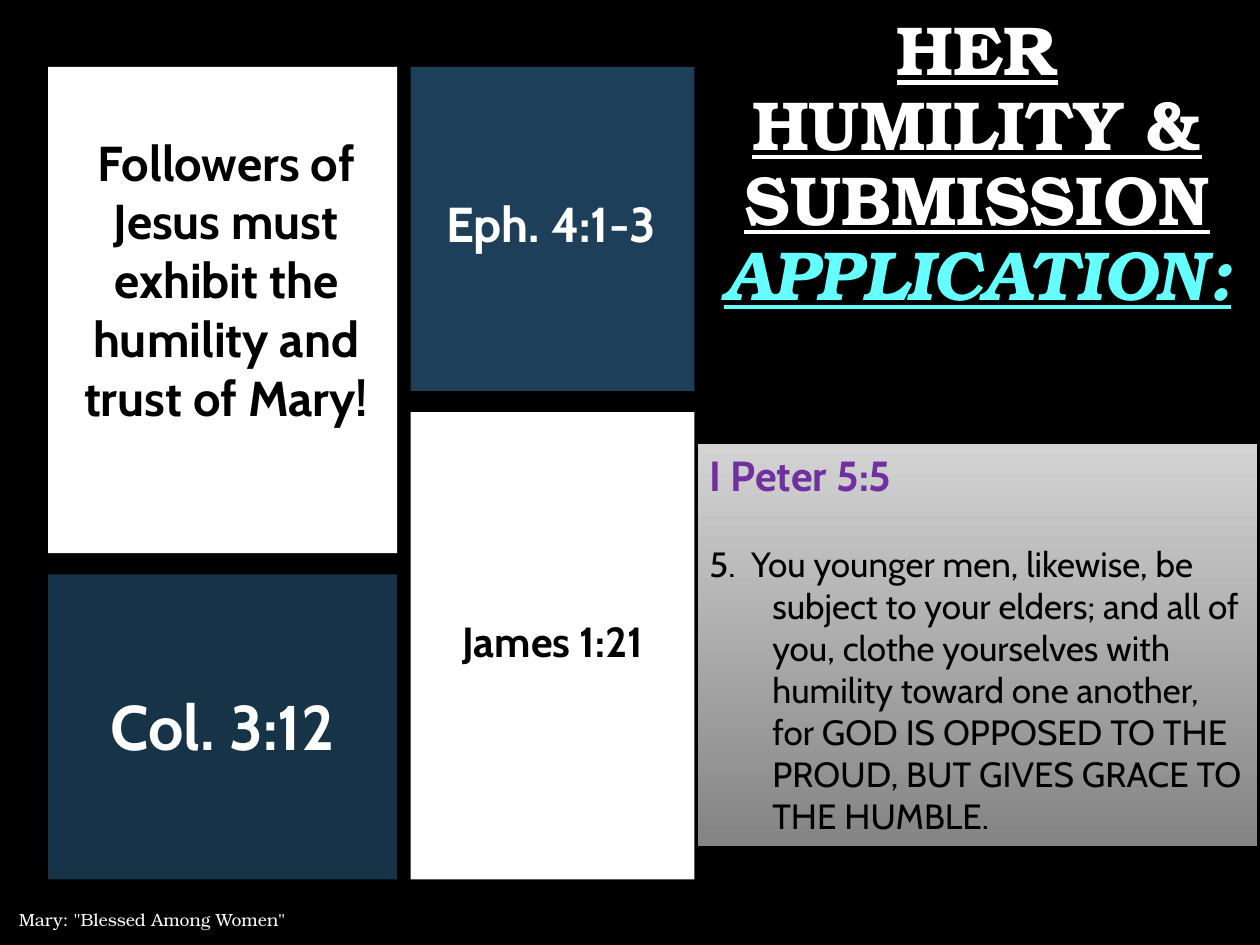
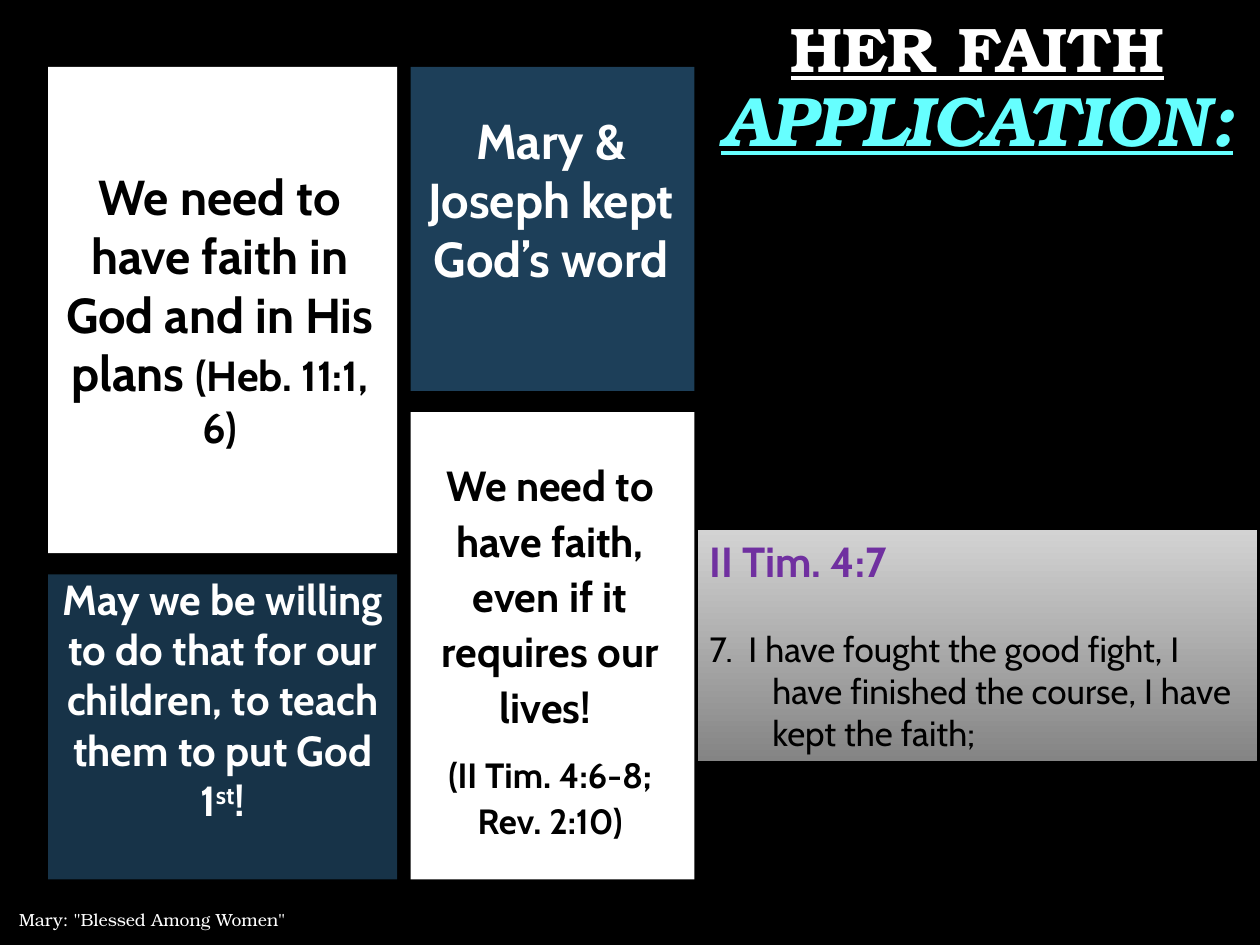
import pptx
import pptx.dml.color
import pptx.enum.shapes
import pptx.enum.text
import pptx.oxml
import pptx.oxml.ns
import pptx.util

Cm = pptx.util.Cm
Pt = pptx.util.Pt
RGBColor = pptx.dml.color.RGBColor
PP_ALIGN = pptx.enum.text.PP_ALIGN
MSO_ANCHOR = pptx.enum.text.MSO_ANCHOR
RECTANGLE = pptx.enum.shapes.MSO_SHAPE.RECTANGLE

BLACK = RGBColor(0x00, 0x00, 0x00)
WHITE = RGBColor(0xFF, 0xFF, 0xFF)
CYAN = RGBColor(0x66, 0xFF, 0xFF)
PURPLE = RGBColor(0x70, 0x30, 0xA0)
STEEL_BLUE = RGBColor(0x2A, 0x5B, 0x7F)
DARK_BLUE = RGBColor(0x1F, 0x44, 0x5F)
LIGHT_GREY = RGBColor(0xD3, 0xD3, 0xD3)
MID_GREY = RGBColor(0x84, 0x84, 0x84)

BODY_FONT = "Cabin"
TITLE_FONT = "TeX Gyre Bonum"

PANEL_TOP, PANEL_BOTTOM, PANEL_GAP = 1.35, 17.73, 0.43
# left, width, height of the upper panel, then (colour, opacity %) from top to bottom
PANEL_COLUMNS = [
    (0.97, 7.04, 9.8, [(WHITE, 100), (DARK_BLUE, 76)]),
    (8.28, 5.72, 6.53, [(STEEL_BLUE, 70), (WHITE, 100)]),
]


def style_run(r, size, color, bold=True, name=BODY_FONT):
    r.font.name = name
    r.font.size = Pt(size)
    r.font.bold = bold
    r.font.color.rgb = color


def set_opacity(sp, percent):
    color = sp.fill._xPr.find(".//" + pptx.oxml.ns.qn("a:srgbClr"))
    alpha = pptx.oxml.parse_xml(
        f'<a:alpha {pptx.oxml.ns.nsdecls("a")} val="{percent * 1000}"/>')
    color.append(alpha)


def outline_run(r, color, width):
    """Draw a line round the letters of a run."""
    ln = pptx.oxml.parse_xml(
        f'<a:ln {pptx.oxml.ns.nsdecls("a")} w="{Pt(width)}">'
        f'<a:solidFill><a:srgbClr val="{color}"/></a:solidFill></a:ln>')
    r._r.get_or_add_rPr().insert(0, ln)


def add_title(s, heading, heading_size, application_size, height):
    title = s.shapes.title
    title.left, title.top = Cm(14), Cm(0.1)
    title.width, title.height = Cm(11.4), Cm(height)
    tf = title.text_frame
    tf.word_wrap = True
    tf.auto_size = pptx.enum.text.MSO_AUTO_SIZE.NONE
    tf.vertical_anchor = MSO_ANCHOR.BOTTOM
    tf.text = f"{heading}\nAPPLICATION:"
    for p, size, color in zip(tf.paragraphs, (heading_size, application_size), (WHITE, CYAN)):
        p.alignment = PP_ALIGN.CENTER
        p.line_spacing = 0.9
        p.space_before = Pt(0)
        style_run(p.runs[0], size, color, name=TITLE_FONT)
        p.runs[0].font.underline = True
    application = tf.paragraphs[1].runs[0]
    application.font.italic = True
    outline_run(application, "0000FF", 0.75)


def add_panels(s):
    for left, width, upper_height, fills in PANEL_COLUMNS:
        lower_top = PANEL_TOP + upper_height + PANEL_GAP
        spans = [(PANEL_TOP, upper_height), (lower_top, PANEL_BOTTOM - lower_top)]
        for (top, height), (color, opacity) in zip(spans, fills):
            sp = s.shapes.add_shape(RECTANGLE, Cm(left), Cm(top), Cm(width), Cm(height))
            sp.shadow.inherit = False
            sp.line.fill.background()
            sp.fill.solid()
            sp.fill.fore_color.rgb = color
            if opacity < 100:
                set_opacity(sp, opacity)


def add_textbox(s, left, top, width, height):
    tf = s.shapes.add_textbox(Cm(left), Cm(top), Cm(width), Cm(height)).text_frame
    tf.word_wrap = True
    return tf


def add_panel_text(s, box, color, paragraphs, line_spacing=None):
    """Centre paragraphs, each a list of (text, size) or (text, size, baseline)."""
    tf = add_textbox(s, *box)
    for i, runs in enumerate(paragraphs):
        p = tf.add_paragraph() if i else tf.paragraphs[0]
        p.alignment = PP_ALIGN.CENTER
        p.line_spacing = line_spacing
        if i:
            p.space_before = Pt(10)
        for text, size, *baseline in runs:
            r = p.add_run()
            r.text = text
            style_run(r, size, color)
            if baseline:
                r._r.get_or_add_rPr().set("baseline", str(baseline[0] * 1000))


def add_verse(s, top, height, reference, verse):
    sp = s.shapes.add_shape(RECTANGLE, Cm(14.05), Cm(top), Cm(11.3), Cm(height))
    sp.shadow.inherit = False
    sp.line.color.rgb = BLACK
    sp.line.width = Pt(1)
    sp.fill.gradient()
    sp.fill.gradient_angle = 270
    for stop, position, color in zip(sp.fill.gradient_stops, (0, 1), (LIGHT_GREY, MID_GREY)):
        stop.position = position
        stop.color.rgb = color
    tf = sp.text_frame
    tf.word_wrap = True
    tf.vertical_anchor = MSO_ANCHOR.TOP
    tf.text = f"{reference}\n{verse}"
    for p in tf.paragraphs:
        p.alignment = PP_ALIGN.LEFT
        pPr = p._p.get_or_add_pPr()
        pPr.set("marL", str(Cm(1.27)))
        pPr.set("indent", str(-Cm(1.27)))
    heading, body = tf.paragraphs
    style_run(heading.runs[0], 24, PURPLE)
    style_run(body.runs[0], 20, BLACK, bold=False)
    body.space_before = Pt(24)


def add_footer(s):
    tf = add_textbox(s, 0.13, 18.11, 13.89, 0.84)
    tf.vertical_anchor = MSO_ANCHOR.MIDDLE
    tf.text = 'Mary: "Blessed Among Women"'
    style_run(tf.paragraphs[0].runs[0], 10, WHITE, bold=False, name=TITLE_FONT)


def add_application_slide(prs, *title):
    s = prs.slides.add_slide(prs.slide_layouts[5])
    add_title(s, *title)
    add_panels(s)
    add_footer(s)
    return s


def add_humility_slide(prs):
    s = add_application_slide(prs, "HER HUMILITY & SUBMISSION", 39.6, 39.6, 6.38)
    add_panel_text(s, (1.04, 2.54, 7.04, 7.44), BLACK,
                   [[("Followers of Jesus must exhibit the humility and trust of Mary!", 28)]])
    add_panel_text(s, (8.28, 12.19, 5.72, 5.36), BLACK, [[("James 1:21", 24)]], 1.1)
    add_panel_text(s, (8, 3.78, 6.22, 1.45), WHITE, [[("Eph. 4:1-3", 28)]])
    add_panel_text(s, (0.97, 13.74, 7.04, 1.8), WHITE, [[("Col. 3:12", 36)]])
    add_verse(s, 8.94, 8.13, "I Peter 5:5",
              "5.  You younger men, likewise, be subject to your elders; and all of you, "
              "clothe yourselves with humility toward one another, for GOD IS OPPOSED TO "
              "THE PROUD, BUT GIVES GRACE TO THE HUMBLE.")


def add_faith_slide(prs):
    s = add_application_slide(prs, "HER FAITH", 36, 40, 3.28)
    add_panel_text(s, (0.91, 3.23, 7.04, 6.07), BLACK,
                   [[("We need to have faith in God and in His plans ", 28),
                     ("(Heb. 11:1, 6)", 24)]])
    add_panel_text(s, (8.23, 9.04, 5.72, 5.36), BLACK,
                   [[("We need to have faith, even if it requires our lives! ", 24)],
                    [("(II Tim. 4:6-8; Rev. 2:10)", 20)]], 1.1)
    add_panel_text(s, (8, 2.11, 6.22, 5.05), WHITE,
                   [[("Mary & Joseph kept God’s word", 28)]])
    add_panel_text(s, (0.97, 11.43, 7.04, 6.4), WHITE,
                   [[("May we be willing to do that for our children, "
                      "to teach them to put God 1", 24),
                     ("st", 24, 30), ("!", 24)]])
    add_verse(s, 10.67, 4.7, "II Tim. 4:7",
              "7.  I have fought the good fight, I have finished the course, "
              "I have kept the faith;")


def main():
    prs = pptx.Presentation()
    prs.slide_width, prs.slide_height = Cm(25.4), Cm(19.05)
    background = prs.slide_master.background.fill
    background.solid()
    background.fore_color.rgb = BLACK
    add_humility_slide(prs)
    add_faith_slide(prs)
    prs.save("out.pptx")


if __name__ == "__main__":
    main()
